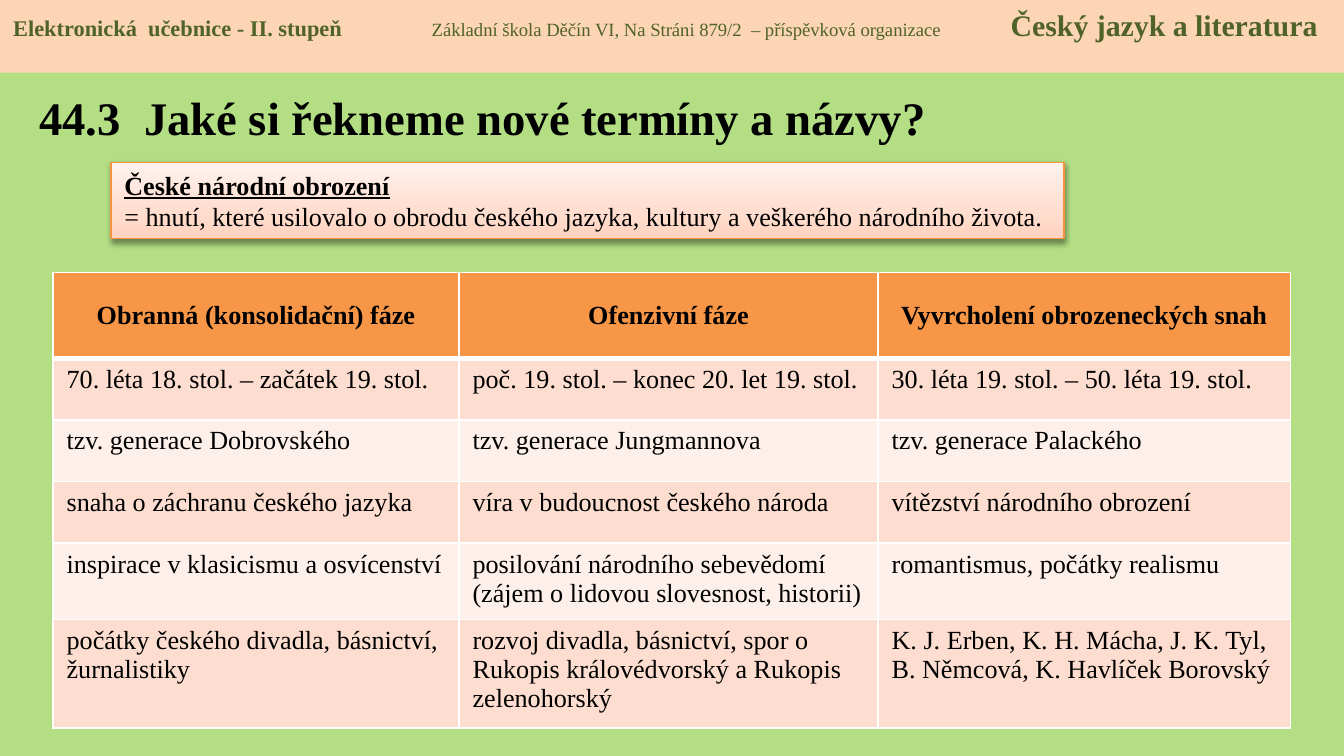
from pptx import Presentation
from pptx.dml.color import RGBColor
from pptx.enum.shapes import MSO_SHAPE as Shape
from pptx.enum.text import MSO_ANCHOR as Anchor, PP_ALIGN as Align
from pptx.oxml import parse_xml
from pptx.oxml.ns import nsdecls, qn
from pptx.util import Pt

FONT = "Times New Roman"
COLORS = {
    "background": "B3DE84", "banner": "FCD5B5", "banner_text": "4F6228",
    "text": "000000", "border": "FFFFFF", "box_line": "F69240",
    "header": "F79646", "odd_row": "FCDDCF", "even_row": "FDEFE9",
}
BOX_GRADIENT = [(0, "FFD2BD"), (35, "FFDED0"), (100, "FFF2ED")]
COLUMN_WIDTHS = [217.5, 224.5, 221]
ROW_HEIGHTS = [46, 33, 33, 33, 41, 58]
PHASES = [
    ["Obranná (konsolidační) fáze", "Ofenzivní fáze", "Vyvrcholení obrozeneckých snah"],
    ["70. léta 18. stol. – začátek 19. stol.", "poč. 19. stol. – konec 20. let 19. stol.",
     "30. léta 19. stol. – 50. léta 19. stol."],
    ["tzv. generace Dobrovského", "tzv. generace Jungmannova", "tzv. generace Palackého"],
    ["snaha o záchranu českého jazyka", "víra v budoucnost českého národa",
     "vítězství národního obrození"],
    ["inspirace v klasicismu a osvícenství",
     "posilování národního sebevědomí (zájem o lidovou slovesnost, historii)",
     "romantismus, počátky realismu"],
    ["počátky českého divadla, básnictví, žurnalistiky",
     "rozvoj divadla, básnictví, spor o Rukopis královédvorský a Rukopis zelenohorský",
     "K. J. Erben, K. H. Mácha, J. K. Tyl, B. Němcová, K. Havlíček Borovský"],
]


def rgb(name):
    return RGBColor.from_string(COLORS[name])


def style(font, size, color="text", bold=False, underline=False):
    font.name, font.size, font.bold, font.underline = FONT, Pt(size), bold, underline
    font.color.rgb = rgb(color)


def add_rectangle(slide, left, top, width, height):
    rectangle = slide.shapes.add_shape(
        Shape.RECTANGLE, Pt(left), Pt(top), Pt(width), Pt(height))
    rectangle.shadow.inherit = False
    rectangle.text_frame.word_wrap = True
    rectangle.text_frame.vertical_anchor = Anchor.TOP
    return rectangle


def add_banner(slide):
    banner = add_rectangle(slide, 0, 0, 720, 39)
    banner.fill.solid()
    banner.fill.fore_color.rgb = rgb("banner")
    banner.line.fill.background()
    line = banner.text_frame.paragraphs[0]
    line.alignment = Align.LEFT
    stops = "".join(f'<a:tab pos="{Pt(stop)}" algn="l"/>' for stop in (224.2, 534.4))
    line._p.get_or_add_pPr().append(
        parse_xml(f'<a:tabLst {nsdecls("a")}>{stops}</a:tabLst>'))
    for text, size, bold in [
        ("Elektronická  učebnice - II. stupeň\t", 12, True),
        ("Základní škola Děčín VI, Na Stráni 879/2  – příspěvková organizace\t", 10, False),
        ("Český jazyk a literatura", 16, True),
    ]:
        run = line.add_run()
        run.text = text
        style(run.font, size, "banner_text", bold)


def add_title(slide, text):
    title = slide.shapes.add_textbox(Pt(14), Pt(39), Pt(534), Pt(47)).text_frame
    title.word_wrap = True
    title.vertical_anchor = Anchor.MIDDLE
    title.text = text
    style(title.paragraphs[0].runs[0].font, 25, bold=True)


def add_gradient_and_shadow(shape):
    """Give the shape a three-stop upward gradient and a soft shadow below."""
    stops = "".join(f'<a:gs pos="{position * 1000}"><a:srgbClr val="{color}"/></a:gs>'
                    for position, color in BOX_GRADIENT)
    properties = shape._element.spPr
    properties.find(qn("a:prstGeom")).addnext(parse_xml(
        f'<a:gradFill {nsdecls("a")} rotWithShape="1"><a:gsLst>{stops}</a:gsLst>'
        '<a:lin ang="16200000" scaled="1"/></a:gradFill>'))
    properties.find(qn("a:effectLst")).append(parse_xml(
        f'<a:outerShdw {nsdecls("a")} blurRad="{Pt(3.1)}" dist="{Pt(1.6)}" dir="5400000" '
        'rotWithShape="0"><a:srgbClr val="000000"><a:alpha val="38000"/></a:srgbClr>'
        '</a:outerShdw>'))


def add_definition(slide, term, meaning):
    box = add_rectangle(slide, 59.5, 87, 510.5, 41)
    box.line.color.rgb = rgb("box_line")
    box.line.width = Pt(0.75)
    add_gradient_and_shadow(box)
    box.text_frame.text = f"{term}\n{meaning}"
    for paragraph, is_term in zip(box.text_frame.paragraphs, (True, False)):
        paragraph.alignment = Align.LEFT
        style(paragraph.runs[0].font, 14, bold=is_term, underline=is_term)


def set_borders(cell, top, bottom):
    for side, width in [("L", 1), ("R", 1), ("T", top), ("B", bottom)]:
        cell._tc.get_or_add_tcPr().append(parse_xml(
            f'<a:ln{side} {nsdecls("a")} w="{Pt(width)}"><a:solidFill>'
            f'<a:srgbClr val="{COLORS["border"]}"/></a:solidFill></a:ln{side}>'))


def fill_cell(cell, text, row):
    is_header = row == 0
    set_borders(cell, top=3 if row == 1 else 1, bottom=3 if is_header else 1)
    cell.fill.solid()
    cell.fill.fore_color.rgb = rgb(
        "header" if is_header else "odd_row" if row % 2 else "even_row")
    cell.text = text
    cell.vertical_anchor = Anchor.MIDDLE if is_header else Anchor.TOP
    paragraph = cell.text_frame.paragraphs[0]
    paragraph.alignment = Align.CENTER if is_header else Align.LEFT
    style(paragraph.runs[0].font, 14, bold=is_header)


def add_phase_table(slide):
    phases = slide.shapes.add_table(
        len(ROW_HEIGHTS), len(COLUMN_WIDTHS), Pt(28.5), Pt(146),
        Pt(sum(COLUMN_WIDTHS)), Pt(sum(ROW_HEIGHTS))).table
    phases.horz_banding = False
    for column, width in zip(phases.columns, COLUMN_WIDTHS):
        column.width = Pt(width)
    for row, height in zip(phases.rows, ROW_HEIGHTS):
        row.height = Pt(height)
    for row, texts in enumerate(PHASES):
        for column, text in enumerate(texts):
            fill_cell(phases.cell(row, column), text, row)


def main():
    presentation = Presentation()
    presentation.slide_width, presentation.slide_height = Pt(720), Pt(405)
    slide = presentation.slides.add_slide(presentation.slide_layouts[6])
    slide.background.fill.solid()
    slide.background.fill.fore_color.rgb = rgb("background")
    add_title(slide, "44.3  Jaké si řekneme nové termíny a názvy?")
    add_banner(slide)
    add_definition(
        slide, "České národní obrození",
        "= hnutí, které usilovalo o obrodu českého jazyka, kultury a veškerého národního života.")
    add_phase_table(slide)
    presentation.save("out.pptx")


if __name__ == "__main__":
    main()
